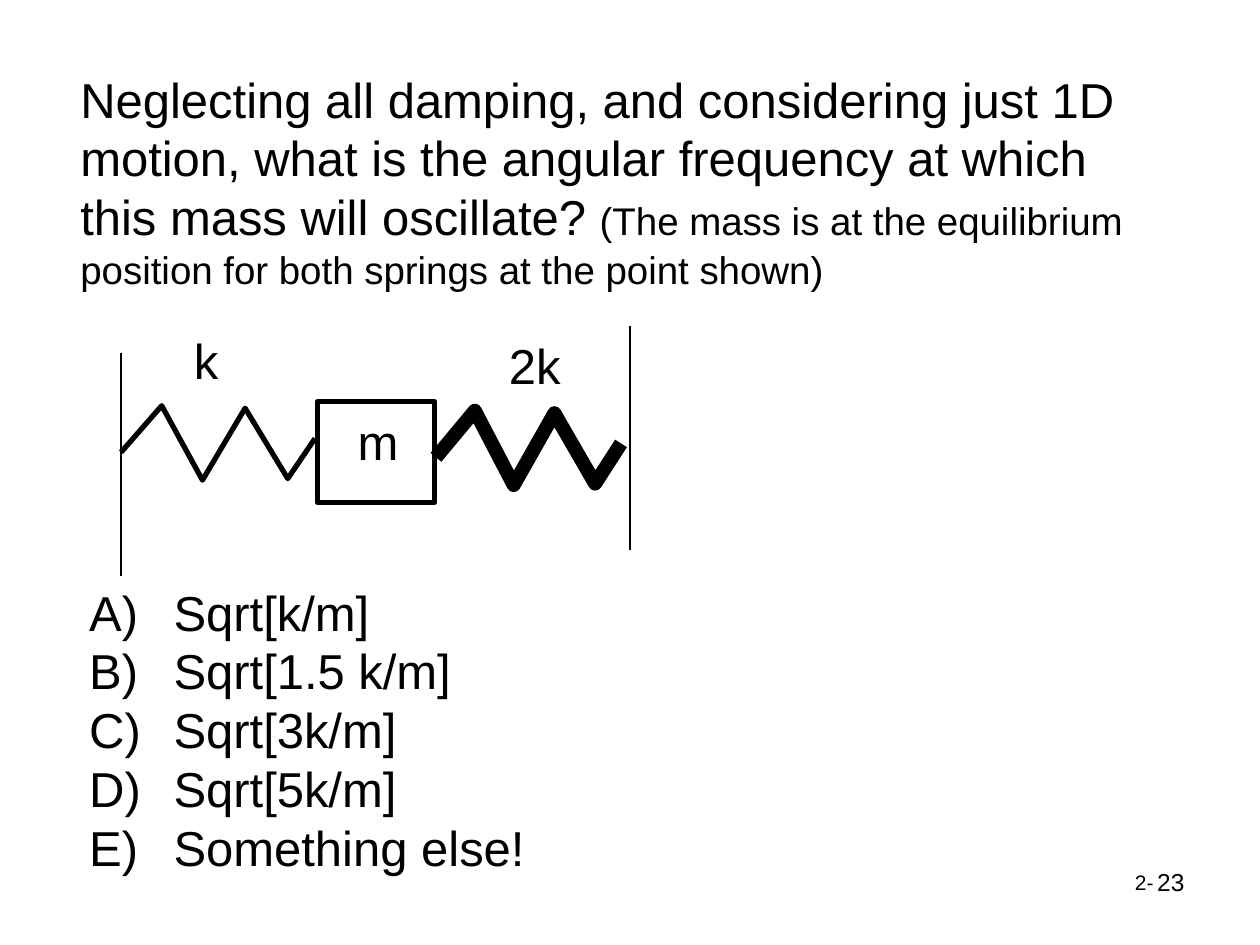
from lxml.etree import SubElement
from pptx import Presentation
from pptx.dml.color import RGBColor
from pptx.enum.shapes import MSO_CONNECTOR, MSO_SHAPE
from pptx.enum.text import MSO_AUTO_SIZE, PP_ALIGN
from pptx.oxml.ns import qn
from pptx.util import Cm, Pt

COLORS = {"ink": "000000", "paper": "FFFFFF"}
INK = RGBColor.from_string(COLORS["ink"])

deck = Presentation()
deck.slide_width, deck.slide_height = Cm(25.4), Cm(19.05)
slide = deck.slides.add_slide(deck.slide_layouts[6])
slide.background.fill.solid()
slide.background.fill.fore_color.rgb = RGBColor.from_string(COLORS["paper"])
shapes = slide.shapes


def add_text(left, top, width, height, lines, size=28, wrap=False, align=PP_ALIGN.LEFT):
    box = shapes.add_textbox(Cm(left), Cm(top), Cm(width), Cm(height))
    frame = box.text_frame
    frame.word_wrap = wrap
    frame.auto_size = MSO_AUTO_SIZE.NONE
    frame.text = "\n".join(lines)
    for paragraph in frame.paragraphs:
        paragraph.alignment = align
        paragraph.font.name = "Arial"
        paragraph.font.size = Pt(size)
        paragraph.font.color.rgb = INK
    return frame


def ink_outline(shape, weight):
    shape.shadow.inherit = False
    shape.fill.background()
    shape.line.color.rgb = INK
    shape.line.width = Pt(weight)


add_text(22.63, 17.4, 1.22, 0.76, ["2-"], 12)
add_text(18.21, 17.35, 5.92, 1.32, ["23"], 14, True, PP_ALIGN.RIGHT)

mass = shapes.add_shape(MSO_SHAPE.RECTANGLE, Cm(6.4), Cm(8.1), Cm(2.36), Cm(2.03))
ink_outline(mass, 3)

zigzag = [(0, 0), (0.21, -0.94), (0.42, 0.56), (0.64, -0.89), (0.86, 0.53), (1, -0.28)]
for left, start, length, weight in [(2.44, 9.12, 3.91, 3), (8.79, 9.22, 3.73, 8)]:
    points = [(Cm(left + x * length), Cm(start + y)) for x, y in zigzag]
    outline = shapes.build_freeform(*points[0])
    outline.add_line_segments(points[1:], close=False)
    ink_outline(outline.convert_to_shape(), weight)

for x, top in [(2.44, 7.11), (12.7, 6.58)]:
    wall = shapes.add_connector(MSO_CONNECTOR.STRAIGHT, Cm(x), Cm(top), Cm(x), Cm(top + 4.5))
    wall.line.color.rgb = INK
    wall.line.width = Pt(1)
    SubElement(wall._element.spPr, qn("a:effectLst"))

for label, left, top, width in [("k", 3.66, 6.53, 1.02), ("2k", 10.01, 6.63, 1.57), ("m", 6.96, 8.18, 1.35)]:
    add_text(left, top, width, 1.45, [label])

question = add_text(1.37, 1.27, 21.97, 4.78, [
    "Neglecting all damping, and considering just 1D motion, "
    "what is the angular frequency at which this mass will oscillate? "
], wrap=True)
hint = question.paragraphs[0].add_run()
hint.text = "(The mass is at the equilibrium position for both springs at the point shown)"
hint.font.size = Pt(22)

answers = add_text(1.55, 11.61, 9.27, 7.44, [
    "Sqrt[k/m]", "Sqrt[1.5 k/m]", "Sqrt[3k/m]", "Sqrt[5k/m]", "Something else!",
])
for answer in answers.paragraphs:
    properties = answer._p.get_or_add_pPr()
    properties.set("marL", str(Cm(1.7)))
    properties.set("indent", str(-Cm(1.7)))
    numbering = SubElement(properties, qn("a:buAutoNum"), type="alphaUcParenR")
    properties.find(qn("a:defRPr")).addprevious(numbering)

deck.save("out.pptx")
